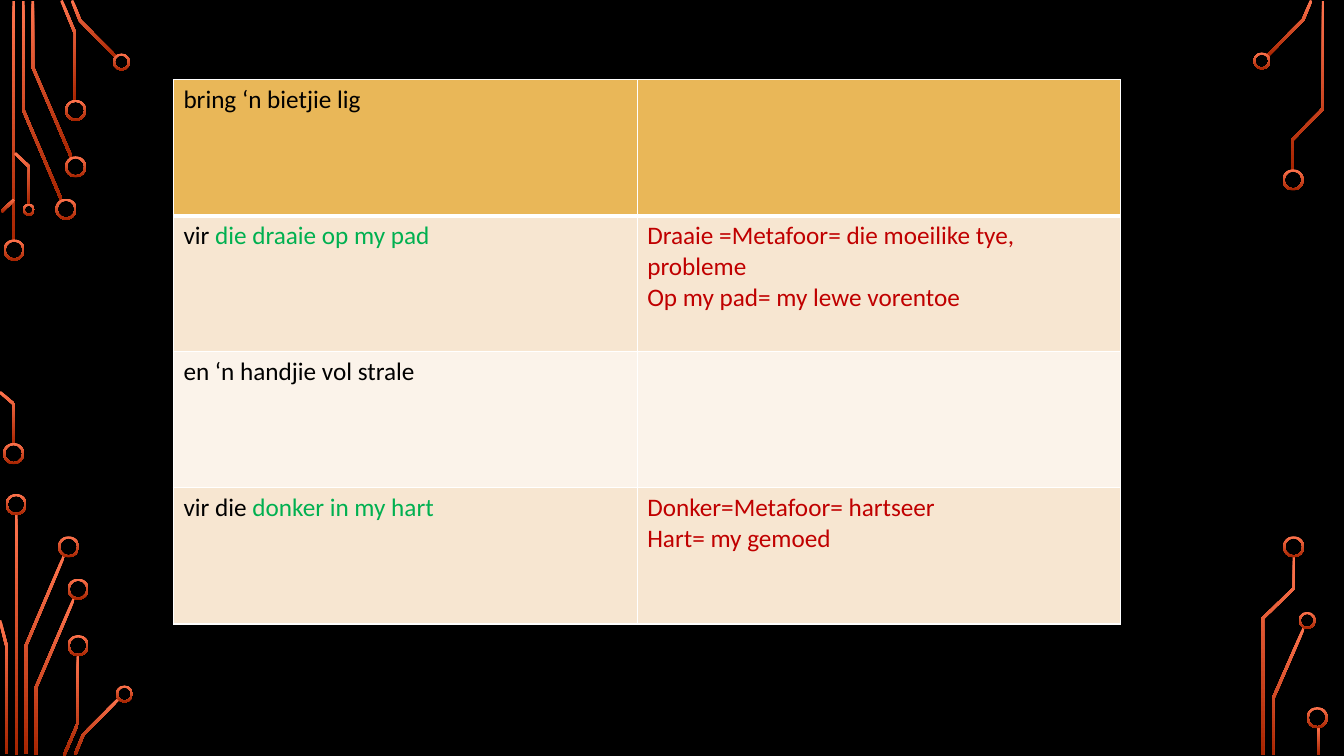
"""Build a black slide with a poem table framed by circuit-board traces."""
import math

from lxml import etree
from pptx import Presentation
from pptx.dml.color import RGBColor
from pptx.enum.shapes import MSO_SHAPE
from pptx.oxml.ns import qn
from pptx.util import Inches, Pt

DONUT = MSO_SHAPE.DONUT
GRID = Inches(0.01)
COLS, ROWS = 1333, 750

BLACK = RGBColor(0x00, 0x00, 0x00)
WHITE = RGBColor(0xFF, 0xFF, 0xFF)
GREEN = RGBColor(0x00, 0xB0, 0x50)
RED = RGBColor(0xC0, 0x00, 0x00)
GOLD = RGBColor(0xE9, 0xB7, 0x58)
SAND = RGBColor(0xF7, 0xE6, 0xD1)
CREAM = RGBColor(0xFB, 0xF3, 0xEA)
CORAL = RGBColor(0xFF, 0x74, 0x4E)
RUST = RGBColor(0xA6, 0x24, 0x00)

TEXT_FORMAT = {"name": "Calibri", "size": Pt(18), "bold": False}
TRACE_WIDTH = 2.7
RING_WALL = 2

TRACES = [
    [(13.5, 1), (13.5, 240)],
    [(23, 1), (23, 109), (61, 198.5)],
    [(32.5, 1), (32.5, 66.5), (71, 156.5)],
    [(61, 0.5), (74.5, 33), (74.5, 100)],
    [(71.5, 0.5), (79.5, 20.5), (115.5, 57)],
    [(14, 198), (1.5, 210)],
    [(0, 389), (14, 401), (14, 441)],
    [(15, 152), (29, 165.5), (29, 203)],
    [(16, 510), (16, 749)],
    [(25.5, 748), (25.5, 641), (63.5, 551.5)],
    [(6.5, 748), (6.5, 641), (0, 615.5)],
    [(35.5, 749), (35.5, 682.5), (73.5, 593.5)],
    [(63.5, 749.5), (77.5, 717), (77.5, 650)],
    [(74.5, 748.5), (82.5, 729), (118, 693)],
    [(1257, 55.5), (1292.5, 19.5), (1300.5, 0.5)],
    [(1262.5, 749), (1262.5, 693.5), (1293, 623.5)],
    [(1312.5, 1), (1312.5, 107.5), (1282, 138.5), (1282, 169)],
    [(1252.5, 749), (1252.5, 613.5), (1283.5, 583.5), (1283.5, 552)],
    [(1307.5, 721), (1307.5, 749)],
]

RINGS = {
    21: [(14, 248), (13.5, 450), (65.5, 207.5), (75, 165.5), (75, 109.5),
         (16, 500.5), (68, 542.5), (77.5, 584.5), (77.5, 640.5),
         (1282.5, 178.5), (1283, 542.5), (1306.5, 712)],
    17: [(120.5, 61.5), (123.5, 688.5), (1251.5, 60.5), (1296.5, 615.5)],
    12: [(28.5, 208)],
}

TABLE_LEFT, TABLE_TOP, ROW_HEIGHT = 172, 79, 135
COLUMN_WIDTHS = [460, 479]
ROW_FILLS = [GOLD, SAND, CREAM, SAND]
POEM = [
    [[[("bring ‘n bietjie lig", BLACK)]], []],
    [[[("vir ", BLACK), ("die draaie op my pad", GREEN)]],
     [[("Draaie =Metafoor= die moeilike tye, probleme", RED)],
      [("Op my pad= my lewe vorentoe", RED)]]],
    [[[("en ‘n handjie vol strale", BLACK)]], []],
    [[[("vir die ", BLACK), ("donker in my hart", GREEN)]],
     [[("Donker=Metafoor= hartseer", RED)], [("Hart= my gemoed", RED)]]],
]


def units(value):
    return round(value * GRID)


def paint(sp):
    sp.shadow.inherit = False
    sp.line.fill.background()
    sp.fill.gradient()
    sp.fill.gradient_angle = 270
    for stop, color in zip(sp.fill.gradient_stops, (CORAL, RUST)):
        stop.color.rgb = color


def ribbon(points, width):
    normals = []
    for (x1, y1), (x2, y2) in zip(points, points[1:]):
        length = math.hypot(x2 - x1, y2 - y1)
        normals.append(((y1 - y2) / length, (x2 - x1) / length))
    left, right = [], []
    joints = zip(points, normals[:1] + normals, normals + normals[-1:])
    for (x, y), (ax, ay), (bx, by) in joints:
        reach = width / 2 / (1 + ax * bx + ay * by)
        dx, dy = (ax + bx) * reach, (ay + by) * reach
        left.append((units(x + dx), units(y + dy)))
        right.append((units(x - dx), units(y - dy)))
    return left + right[::-1]


def add_trace(s, points):
    outline = ribbon(points, TRACE_WIDTH)
    builder = s.shapes.build_freeform(*outline[0])
    builder.add_line_segments(outline[1:], close=True)
    paint(builder.convert_to_shape())


def add_ring(s, x, y, size):
    box = (x - size / 2, y - size / 2, size, size)
    sp = s.shapes.add_shape(DONUT, *map(units, box))
    sp.adjustments[0] = RING_WALL / size
    paint(sp)


def set_borders(cell, widths):
    tc_pr = cell._tc.get_or_add_tcPr()
    for side, width in widths.items():
        ln = etree.SubElement(tc_pr, qn(f"a:ln{side}"), w=str(Pt(width)))
        fill = etree.SubElement(ln, qn("a:solidFill"))
        etree.SubElement(fill, qn("a:srgbClr"), val=str(WHITE))


def write(cell, paragraphs):
    tf = cell.text_frame
    for i, runs in enumerate(paragraphs):
        p = tf.add_paragraph() if i else tf.paragraphs[0]
        for text, color in runs:
            r = p.add_run()
            r.text = text
            for key, value in TEXT_FORMAT.items():
                setattr(r.font, key, value)
            r.font.color.rgb = color


def add_poem_table(s):
    box = (TABLE_LEFT, TABLE_TOP, sum(COLUMN_WIDTHS), ROW_HEIGHT * len(POEM))
    frame = s.shapes.add_table(len(POEM), len(COLUMN_WIDTHS), *map(units, box))
    table = frame.table
    table.first_row = table.horz_banding = False
    for column, width in zip(table.columns, COLUMN_WIDTHS):
        column.width = units(width)
    for i, (row, fill) in enumerate(zip(POEM, ROW_FILLS)):
        table.rows[i].height = units(ROW_HEIGHT)
        borders = {"L": 1, "R": 1, "T": 3 if i == 1 else 1, "B": 1 if i else 3}
        for j, paragraphs in enumerate(row):
            cell = table.cell(i, j)
            set_borders(cell, borders)
            cell.fill.solid()
            cell.fill.fore_color.rgb = fill
            write(cell, paragraphs)


def main():
    prs = Presentation()
    prs.slide_width, prs.slide_height = units(COLS), units(ROWS)
    s = prs.slides.add_slide(prs.slide_layouts[6])
    s.background.fill.solid()
    s.background.fill.fore_color.rgb = BLACK
    for points in TRACES:
        add_trace(s, points)
    for size, centres in RINGS.items():
        for x, y in centres:
            add_ring(s, x, y, size)
    add_poem_table(s)
    prs.save("out.pptx")


if __name__ == "__main__":
    main()
